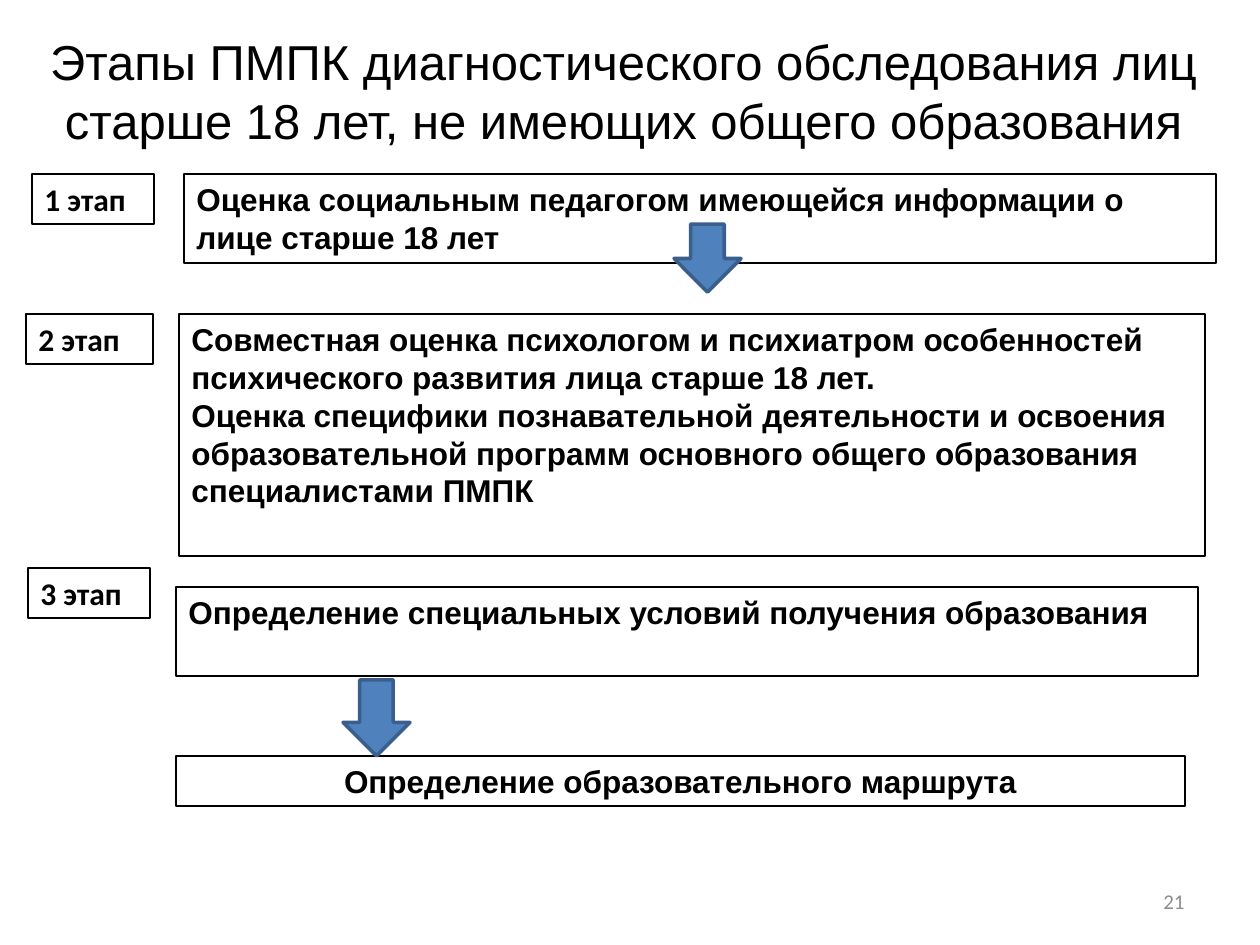
from dataclasses import dataclass
from pptx import Presentation
from pptx.dml.color import RGBColor as Color
from pptx.enum.shapes import MSO_SHAPE as Kind
from pptx.enum.text import MSO_ANCHOR as Anchor, PP_ALIGN as Align
from pptx.util import Emu, Pt

SCALE = 914400 / 126


def px(num):
    return Emu(round(num * SCALE))


@dataclass(frozen=True)
class Theme:
    ink: str = "000000"
    gray: str = "8C8C8C"
    blue: str = "4F81BD"
    edge: str = "3A5F8C"
    sans: str = "Arial"
    small: str = "Calibri"
    head: int = 28
    body: int = 18
    note: int = 12
    thin: float = 0.75
    thick: float = 2


class Deck:
    def __init__(self, theme):
        self.theme = theme
        self.file = Presentation()
        self.file.slide_width = px(1260)
        self.file.slide_height = px(945)
        self.slide = self.file.slides.add_slide(self.file.slide_layouts[6])

    def label(self, shape, lines, font, size, tone, bold=False,
              align=Align.LEFT, anchor=Anchor.TOP):
        frame = shape.text_frame
        frame.word_wrap = True
        frame.vertical_anchor = anchor
        for i, line in enumerate(lines):
            para = frame.add_paragraph() if i else frame.paragraphs[0]
            para.alignment = align
            run = para.add_run()
            run.text = line
            run.font.name = font
            run.font.size = Pt(size)
            run.font.bold = bold
            run.font.color.rgb = Color.from_string(tone)

    def text(self, place, line, font, size, tone, align):
        shape = self.slide.shapes.add_textbox(*map(px, place))
        self.label(shape, [line], font, size, tone, align=align, anchor=Anchor.MIDDLE)

    def shape(self, kind, place, fill, edge, width):
        shape = self.slide.shapes.add_shape(kind, *map(px, place))
        shape.shadow.inherit = False
        if fill:
            shape.fill.solid()
            shape.fill.fore_color.rgb = Color.from_string(fill)
        else:
            shape.fill.background()
        shape.line.color.rgb = Color.from_string(edge)
        shape.line.width = Pt(width)
        return shape

    def box(self, place, lines, font, align=Align.LEFT):
        look = self.theme
        shape = self.shape(Kind.RECTANGLE, place, None, look.ink, look.thin)
        self.label(shape, lines, font, look.body, look.ink, True, align)

    def arrow(self, place):
        look = self.theme
        self.shape(Kind.DOWN_ARROW, place, look.blue, look.edge, look.thick)

    def save(self):
        self.file.save("out.pptx")


TITLE = "Этапы ПМПК диагностического обследования лиц старше 18 лет, не имеющих общего образования"
STAGES = [(32, 174, 122), (26, 314, 127), (28, 568, 122)]
STEPS = [
    ((184, 174, 1032, 89), Align.LEFT,
     ["Оценка социальным педагогом имеющейся информации о лице старше 18 лет"]),
    ((179, 314, 1026, 242), Align.LEFT,
     ["Совместная оценка психологом и психиатром особенностей психического развития лица старше 18 лет.",
      "Оценка специфики познавательной деятельности и освоения образовательной программ "
      "основного общего образования специалистами ПМПК"]),
    ((176, 587, 1022, 89), Align.LEFT,
     ["Определение специальных условий получения образования"]),
    ((176, 756, 1009, 50), Align.CENTER,
     ["Определение образовательного маршрута"]),
]
ARROWS = [(674, 224, 67, 68), (343, 680, 67, 76)]


def main():
    look = Theme()
    deck = Deck(look)
    deck.text((32, 16, 1183, 149), TITLE, look.sans, look.head, look.ink, Align.CENTER)
    for num, (left, top, width) in enumerate(STAGES, 1):
        deck.box((left, top, width, 50), [f"{num} этап"], look.small)
    for place, align, lines in STEPS:
        deck.box(place, lines, look.sans, align)
    for place in ARROWS:
        deck.arrow(place)
    deck.text((903, 876, 294, 50), "21", look.small, look.note, look.gray, Align.RIGHT)
    deck.save()


if __name__ == "__main__":
    main()
